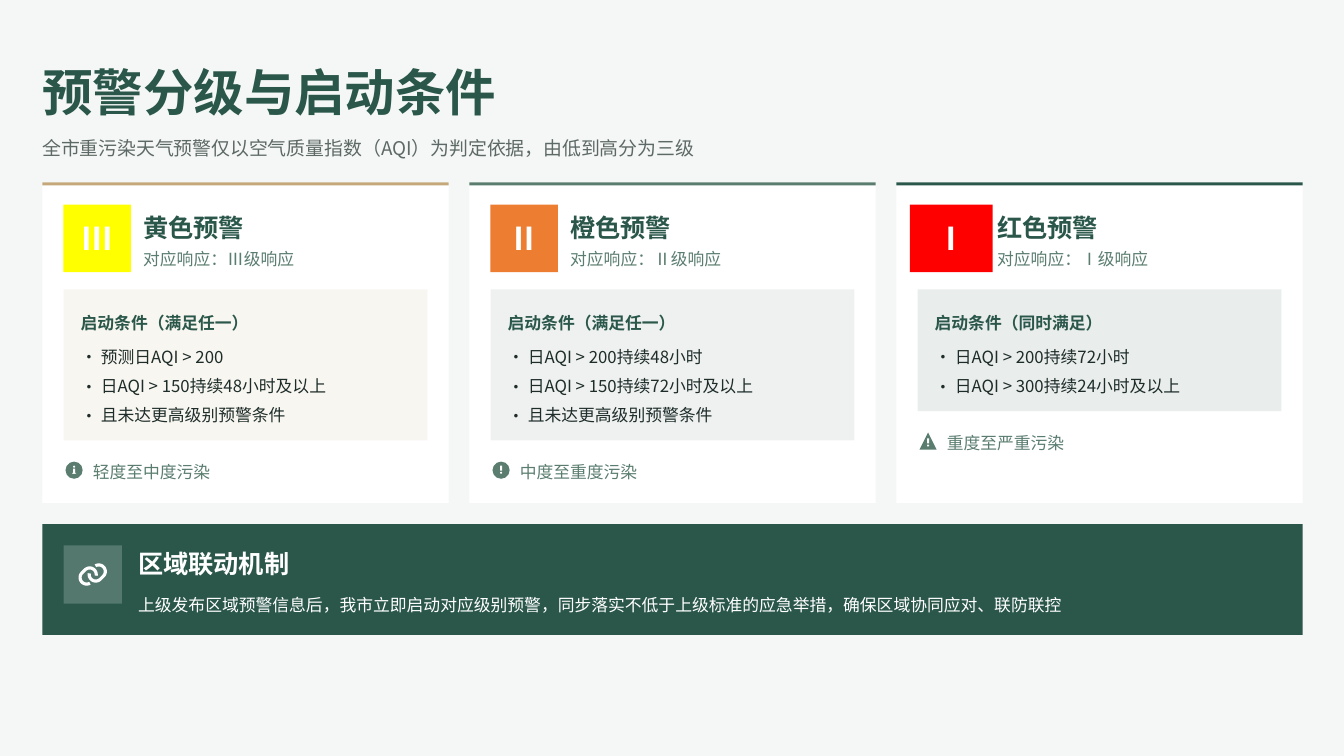
import math

import pptx
import pptx.dml.color
import pptx.enum.shapes
import pptx.enum.text
import pptx.oxml.ns
import pptx.util
from lxml import etree

Inches = pptx.util.Inches
Pt = pptx.util.Pt
RGBColor = pptx.dml.color.RGBColor
SHAPE = pptx.enum.shapes.MSO_SHAPE
ANCHOR = pptx.enum.text.MSO_ANCHOR
ALIGN = pptx.enum.text.PP_ALIGN
qn = pptx.oxml.ns.qn

FONT = "Noto Sans CJK SC"
BACKGROUND = RGBColor(0xF4, 0xF7, 0xF5)
WHITE = RGBColor(0xFF, 0xFF, 0xFF)
INK = RGBColor(0x1E, 0x2D, 0x2A)
GREEN = RGBColor(0x2A, 0x57, 0x4A)
SAGE = RGBColor(0x5A, 0x7D, 0x6F)
SAND = RGBColor(0xC4, 0xA8, 0x7C)
YELLOW = RGBColor(0xFF, 0xFF, 0x00)
ORANGE = RGBColor(0xED, 0x7D, 0x31)
RED = RGBColor(0xFF, 0x00, 0x00)

LEFT, CONTENT_WIDTH = 0.42, 12.5
CARD_TOP, CARD_WIDTH, CARD_HEIGHT = 1.81, 4.03, 3.18
PANEL_TOP, PANEL_WIDTH, LINE_HEIGHT = 2.87, 3.61, 0.29
PADDING = 0.21
ICON_SIZE = 0.17

# Marks inside the icons: shape, width, height, offset from the icon's top
INFO_MARKS = [(SHAPE.OVAL, 0.02, 0.02, 0.04), (SHAPE.RECTANGLE, 0.02, 0.05, 0.07),
              (SHAPE.RECTANGLE, 0.04, 0.01, 0.11)]
ALERT_MARKS = [(SHAPE.RECTANGLE, 0.02, 0.05, 0.04), (SHAPE.OVAL, 0.02, 0.02, 0.1)]
WARNING_MARKS = [(SHAPE.RECTANGLE, 0.02, 0.05, 0.06), (SHAPE.OVAL, 0.02, 0.02, 0.12)]

# Numeral, badge colour, badge width, accent, name, heading, conditions, severity, icon, marks
LEVELS = [
    ("Ⅲ", YELLOW, 0.67, SAND, "黄色预警", "启动条件（满足任一）",
     ["预测日AQI > 200", "日AQI > 150持续48小时及以上", "且未达更高级别预警条件"],
     "轻度至中度污染", SHAPE.OVAL, INFO_MARKS),
    ("Ⅱ", ORANGE, 0.67, SAGE, "橙色预警", "启动条件（满足任一）",
     ["日AQI > 200持续48小时", "日AQI > 150持续72小时及以上", "且未达更高级别预警条件"],
     "中度至重度污染", SHAPE.OVAL, ALERT_MARKS),
    ("Ⅰ", RED, 0.82, GREEN, "红色预警", "启动条件（同时满足）",
     ["日AQI > 200持续72小时", "日AQI > 300持续24小时及以上"],
     "重度至严重污染", SHAPE.ISOSCELES_TRIANGLE, WARNING_MARKS),
]


def set_opacity(parent, percent):
    color = parent.find(".//" + qn("a:srgbClr"))
    etree.SubElement(color, qn("a:alpha"), val=str(percent * 1000))


def format_paragraph(paragraph, size, color, bold=False, spacing=None, align=ALIGN.LEFT):
    paragraph.alignment = align
    paragraph.space_before = Pt(0)
    if spacing:
        paragraph.line_spacing = spacing
    font = paragraph.font
    font.size, font.bold, font.name = Pt(size), bold, FONT
    font.color.rgb = color
    properties = paragraph._p.find(".//" + qn("a:defRPr"))
    etree.SubElement(properties, qn("a:ea"), typeface=FONT)


def prepare_frame(shape, margin_x=0, margin_top=0, anchor=ANCHOR.MIDDLE):
    frame = shape.text_frame
    frame.word_wrap = True
    frame.auto_size = pptx.enum.text.MSO_AUTO_SIZE.NONE
    frame.vertical_anchor = anchor
    frame.margin_left = frame.margin_right = Inches(margin_x)
    frame.margin_top, frame.margin_bottom = Inches(margin_top), 0
    return frame


def write_line(shape, text, *style, **options):
    paragraph = prepare_frame(shape).paragraphs[0]
    paragraph.text = text
    format_paragraph(paragraph, *style, **options)


def place(shape, left, top, width, height):
    shape.left, shape.top = Inches(left), Inches(top)
    shape.width, shape.height = Inches(width), Inches(height)


def add_label(slide, box, text, *style, **options):
    label = slide.shapes.add_textbox(*[Inches(length) for length in box])
    write_line(label, text, *style, **options)


def add_block(slide, box, color, kind=SHAPE.RECTANGLE, opacity=None):
    block = slide.shapes.add_shape(kind, *[Inches(length) for length in box])
    block.shadow.inherit = False
    block.fill.solid()
    block.fill.fore_color.rgb = color
    block.line.fill.background()
    if opacity:
        set_opacity(block._element.spPr, opacity)
    return block


def add_icon(slide, left, top, kind, marks):
    add_block(slide, (left, top, ICON_SIZE, ICON_SIZE), SAGE, kind)
    for mark, width, height, offset in marks:
        mark_left = left + (ICON_SIZE - width) / 2
        add_block(slide, (mark_left, top + offset, width, height), WHITE, mark)


def add_link_icon(slide, center_x, center_y):
    # One open loop made of two arcs; the other is turned by half
    loop = []
    for arc_x, arc_y, first, last in [(0.06, -0.03, -120, 45), (0.03, 0, 45, 190)]:
        for angle in range(first, last + 1, 5):
            turn = math.radians(angle)
            loop.append((arc_x + 0.065 * math.cos(turn), arc_y + 0.065 * math.sin(turn)))
    for side in (1, -1):
        points = [(Inches(center_x + side * x), Inches(center_y + side * y)) for x, y in loop]
        builder = slide.shapes.build_freeform(*points[0])
        builder.add_line_segments(points[1:], close=False)
        link = builder.convert_to_shape()
        link.shadow.inherit = False
        link.fill.background()
        link.line.color.rgb = WHITE
        link.line.width = Pt(2.25)


def fill_conditions(slide, panel, left, accent, heading, conditions):
    slide.shapes._spTree.append(panel._element)  # bring in front of the card
    height = 0.63 + LINE_HEIGHT * len(conditions)
    place(panel, left, PANEL_TOP, PANEL_WIDTH, height)
    panel.fill.solid()
    panel.fill.fore_color.rgb = accent
    set_opacity(panel._element.spPr, 10)
    frame = prepare_frame(panel, 0.17, 0.14, ANCHOR.TOP)
    frame.text = "\n".join([heading] + conditions)
    for number, paragraph in enumerate(frame.paragraphs):
        properties = paragraph._p.get_or_add_pPr()
        indent = Inches(0.2) if number else 0
        properties.set("marL", str(indent))
        properties.set("indent", str(-indent))
        if number:
            etree.SubElement(properties, qn("a:buFont"), typeface=FONT)
            etree.SubElement(properties, qn("a:buChar"), char="•")
        else:
            etree.SubElement(properties, qn("a:buNone"))
        format_paragraph(paragraph, 12, INK if number else GREEN, not number, Pt(21))
        if number == 1:
            paragraph.space_before = Pt(3)
    return PANEL_TOP + height


def add_card(slide, panel, left, level):
    (numeral, badge_color, badge_width, accent, name, heading, conditions,
     severity, icon, marks) = level
    inner = left + PADDING
    add_block(slide, (left, CARD_TOP, CARD_WIDTH, CARD_HEIGHT), WHITE)
    add_block(slide, (left, CARD_TOP, CARD_WIDTH, 0.03), accent)
    # Badge and name
    badge_left = inner + (0.67 - badge_width) / 2
    badge = add_block(slide, (badge_left, 2.03, badge_width, 0.67), badge_color)
    write_line(badge, numeral, 22.5, WHITE, True, align=ALIGN.CENTER)
    add_label(slide, (left + 1, 2.08, 1.62, 0.33), name, 18, GREEN, True, 1.1)
    add_label(slide, (left + 1, 2.41, 1.58, 0.25), f"对应响应：{numeral}级响应", 12, SAGE, False, 1.3)
    # Conditions and severity
    bottom = fill_conditions(slide, panel, inner, accent, heading, conditions)
    add_icon(slide, inner + 0.02, bottom + 0.21, icon, marks)
    add_label(slide, (left + 0.5, bottom + 0.16, 1.25, 0.25), severity, 12, SAGE, False, 1.3)


def add_linkage_banner(slide):
    add_block(slide, (LEFT, 5.2, CONTENT_WIDTH, 1.1), GREEN)
    add_block(slide, (LEFT + PADDING, 5.41, 0.58, 0.58), WHITE, opacity=20)
    add_link_icon(slide, 0.92, 5.7)
    add_label(slide, (1.37, 5.41, 11.46, 0.33), "区域联动机制", 18, WHITE, True, 1.1)
    add_label(slide, (1.37, 5.83, 11.42, 0.27),
              "上级发布区域预警信息后，我市立即启动对应级别预警，同步落实不低于上级标准的应急举措，"
              "确保区域协同应对、联防联控", 12, WHITE, False, 1.4)


def main():
    presentation = pptx.Presentation()
    presentation.slide_width, presentation.slide_height = Inches(13.33), Inches(7.5)
    slide = presentation.slides.add_slide(presentation.slide_layouts.get_by_name("Comparison"))
    slide.background.fill.solid()
    slide.background.fill.fore_color.rgb = BACKGROUND

    # Title and subtitle
    title, subtitle, *panels = slide.placeholders
    place(title, LEFT, 0.71, 12.75, 0.5)
    write_line(title, "预警分级与启动条件", 36, GREEN, True, 0.8)
    place(subtitle, LEFT, 1.29, 12.59, 0.29)
    write_line(subtitle, "全市重污染天气预警仅以空气质量指数（AQI）为判定依据，由低到高分为三级",
               13.5, INK, False, 1.3)
    set_opacity(subtitle._element.txBody, 70)

    # Warning levels
    pitch = (CONTENT_WIDTH - CARD_WIDTH) / (len(LEVELS) - 1)
    for index, (panel, level) in enumerate(zip(panels, LEVELS)):
        add_card(slide, panel, LEFT + index * pitch, level)

    add_linkage_banner(slide)
    presentation.save("out.pptx")


if __name__ == "__main__":
    main()
